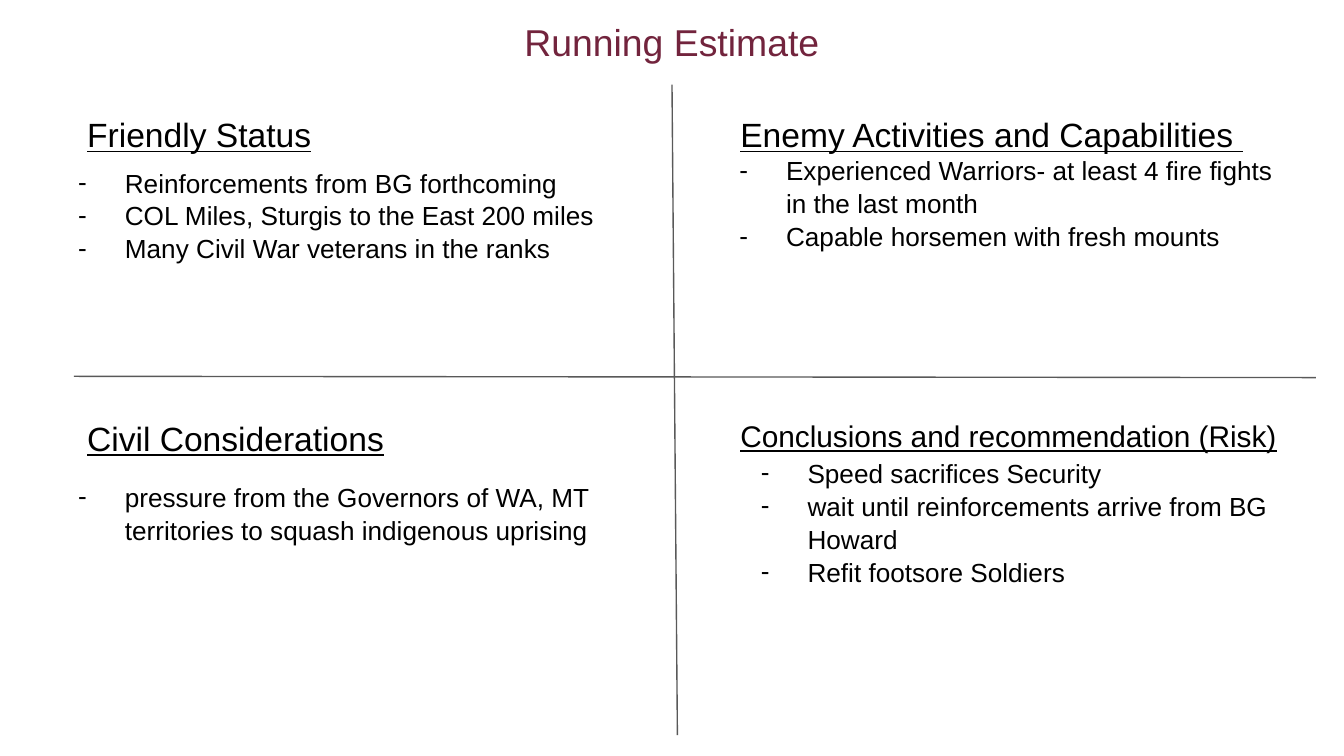
"""Build a four-quadrant running estimate slide."""
from lxml import etree
from pptx import Presentation
from pptx.dml.color import RGBColor
from pptx.enum.shapes import MSO_CONNECTOR
from pptx.enum.text import MSO_ANCHOR, PP_ALIGN
from pptx.oxml.ns import qn
from pptx.util import Pt

STRAIGHT = MSO_CONNECTOR.STRAIGHT
MIDDLE, TOP = MSO_ANCHOR.MIDDLE, MSO_ANCHOR.TOP
CENTER, LEFT = PP_ALIGN.CENTER, PP_ALIGN.LEFT

FONT, BLACK, MAROON, GRAY = "Arial", "000000", "72243D", "595959"
TITLE = "Running Estimate"
DIVIDERS = [(360, 45.4, 362.9, 393.8), (39.6, 201.6, 704.9, 202.3)]
QUADRANTS = [
    {"heading": "Friendly Status", "size": 18, "place": (39.6, 54, 229, 36),
     "list_place": (23.8, 81.4, 315.4, 65.5),
     "items": ["Reinforcements from BG forthcoming",
               "COL Miles, Sturgis to the East 200 miles",
               "Many Civil War veterans in the ranks"]},
    {"heading": "Enemy Activities and Capabilities ", "size": 18,
     "place": (389.5, 54, 315.4, 36), "list_place": (378, 74.9, 315.4, 82),
     "items": ["Experienced Warriors- at least 4 fire fights in the last month",
               "Capable horsemen with fresh mounts"]},
    {"heading": "Civil Considerations", "size": 18, "place": (39.6, 216.7, 234.7, 36),
     "list_place": (23.8, 249.8, 315.4, 65.5),
     "items": ["pressure from the Governors of WA, MT territories "
               "to squash indigenous uprising"]},
    {"heading": "Conclusions and recommendation (Risk)", "size": 16,
     "place": (389.5, 216.7, 330.5, 33.8), "list_place": (389.5, 236.9, 315.4, 82),
     "items": ["Speed sacrifices Security",
               "wait until reinforcements arrive from BG Howard",
               "Refit footsore Soldiers"]},
]


def color(value):
    return RGBColor.from_string(value)


def add_text(page, place, lines, size, tint=BLACK, inset=7.2, anchor=TOP,
             align=LEFT, underline=None):
    box = page.shapes.add_textbox(*map(Pt, place))
    frame = box.text_frame
    frame.word_wrap = True
    frame.vertical_anchor = anchor
    frame.margin_left = frame.margin_right = Pt(inset)
    frame.margin_top = frame.margin_bottom = Pt(inset)
    frame.text = "\n".join(lines)
    for para in frame.paragraphs:
        para.alignment = align
        for span in para.runs:
            span.font.name = FONT
            span.font.size = Pt(size)
            span.font.underline = underline
            span.font.color.rgb = color(tint)
    return frame


def add_bullets(frame):
    for para in frame.paragraphs:
        para.line_spacing = 1.05
        properties = para._p.get_or_add_pPr()
        properties.set("marL", str(Pt(36)))
        properties.set("indent", str(-Pt(25)))
        tint = etree.SubElement(properties, qn("a:buClr"))
        etree.SubElement(tint, qn("a:srgbClr"), val=BLACK)
        etree.SubElement(properties, qn("a:buSzPts"), val="1400")
        etree.SubElement(properties, qn("a:buFont"), typeface=FONT)
        etree.SubElement(properties, qn("a:buChar"), char="-")


def add_divider(page, ends):
    line = page.shapes.add_connector(STRAIGHT, *map(Pt, ends))
    line.line.color.rgb = color(GRAY)
    line.line.width = Pt(0.75)
    etree.SubElement(line._element.spPr, qn("a:effectLst"))


def main():
    deck = Presentation()
    deck.slide_width, deck.slide_height = Pt(720), Pt(405)
    page = deck.slides.add_slide(deck.slide_layouts[6])
    add_text(page, (72, 0, 576, 45), [TITLE], 20, MAROON, 3.6, MIDDLE, CENTER)
    for ends in DIVIDERS:
        add_divider(page, ends)
    for quadrant in QUADRANTS:
        add_text(page, quadrant["place"], [quadrant["heading"]], quadrant["size"],
                 underline=True)
        add_bullets(add_text(page, quadrant["list_place"], quadrant["items"], 14))
    deck.save("out.pptx")


if __name__ == "__main__":
    main()
